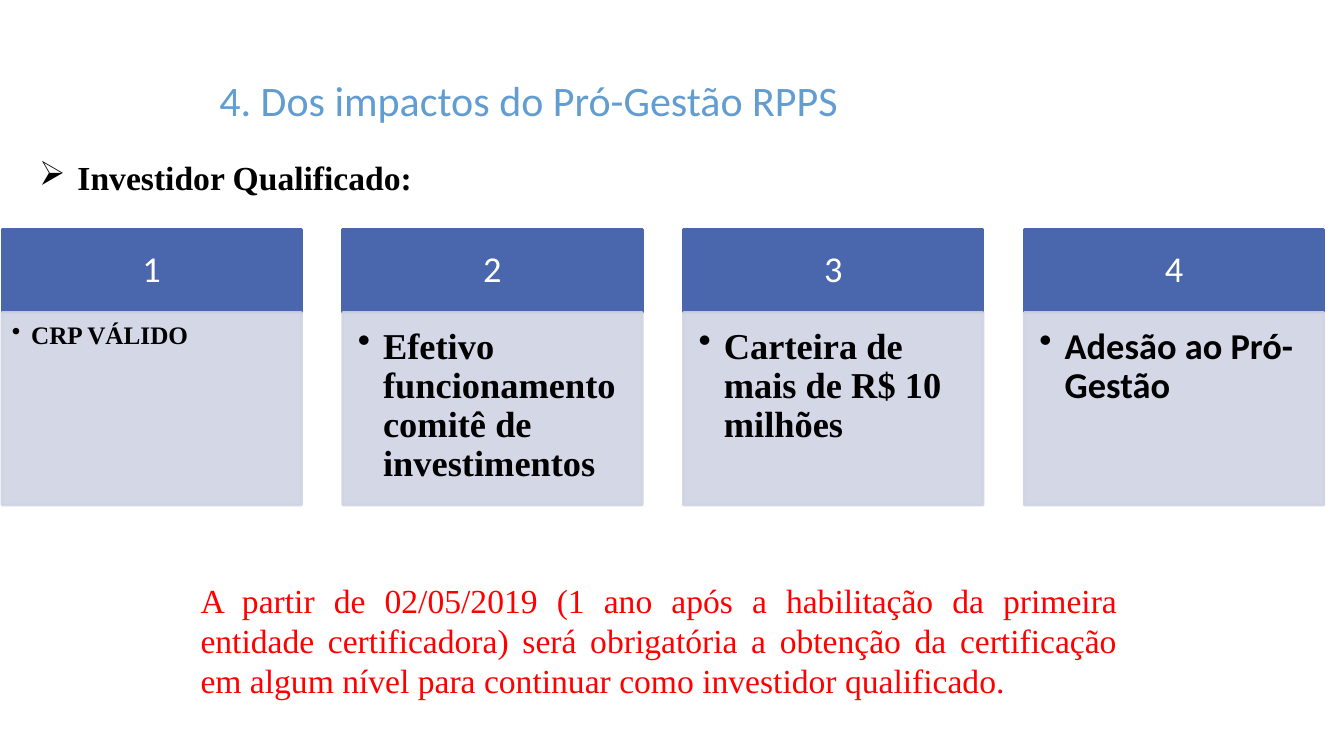
from dataclasses import dataclass
from typing import Any, Optional

import lxml.etree
import pptx
import pptx.dml.color
import pptx.enum.shapes
import pptx.enum.text
import pptx.oxml.ns
import pptx.util

COLOURS = {
    "title": "629DD1",
    "header": "4A66AC",
    "body": "D0D3E3",
    "white": "FFFFFF",
    "black": "000000",
    "notice": "FF0000",
}
EMU_PER_PX = 9144
CARD_LEFT, CARD_TOP, CARD_PITCH = 2, 228, 338
CARD_WIDTH, HEADER_HEIGHT, BODY_HEIGHT = 297, 82, 191
SERIF, SANS = "Times New Roman", "Calibri"
ALIGN = pptx.enum.text.PP_ALIGN
ANCHOR = pptx.enum.text.MSO_ANCHOR


@dataclass(frozen=True)
class Box:
    left: int
    top: int
    width: int
    height: int


@dataclass(frozen=True)
class TextStyle:
    size: int
    font: str
    colour: str
    bold: bool = False
    align: Any = ALIGN.LEFT
    anchor: Any = ANCHOR.TOP
    line_spacing: float = 1.0
    margins: tuple[int, int, int, int] = (10, 5, 10, 5)
    bullet: Optional[str] = None
    indent: int = 0


@dataclass(frozen=True)
class Card:
    text: str
    font: str = SERIF
    size: int = 26
    indent: int = 25
    margins: tuple[int, int, int, int] = (15, 15, 20, 23)


CARDS = (
    Card("CRP VÁLIDO", size=18, indent=19, margins=(10, 10, 14, 16)),
    Card("Efetivo funcionamento comitê de investimentos"),
    Card("Carteira de mais de R$ 10 milhões"),
    Card("Adesão ao Pró-Gestão", font=SANS),
)


def px(length: int) -> pptx.util.Emu:
    return pptx.util.Emu(length * EMU_PER_PX)


def rgb(name: str) -> pptx.dml.color.RGBColor:
    return pptx.dml.color.RGBColor.from_string(COLOURS[name])


def apply(target: Any, values: dict[str, Any]) -> None:
    for name, value in values.items():
        setattr(target, name, value)


def add_child(parent: Any, tag: str, **attributes: str) -> None:
    lxml.etree.SubElement(parent, pptx.oxml.ns.qn(tag), attributes)


def write_text(shape: Any, text: str, style: TextStyle) -> None:
    left, top, right, bottom = style.margins
    apply(shape.text_frame, {
        "word_wrap": True,
        "auto_size": pptx.enum.text.MSO_AUTO_SIZE.NONE,
        "vertical_anchor": style.anchor,
        "margin_left": px(left),
        "margin_top": px(top),
        "margin_right": px(right),
        "margin_bottom": px(bottom),
    })
    paragraph = shape.text_frame.paragraphs[0]
    if style.bullet:
        properties = paragraph._p.get_or_add_pPr()
        properties.set("marL", str(px(style.indent)))
        properties.set("indent", str(-px(style.indent)))
        add_child(properties, "a:buChar", char=style.bullet)
    apply(paragraph, {"alignment": style.align, "line_spacing": style.line_spacing})
    run = paragraph.add_run()
    run.text = text
    apply(run.font, {"size": pptx.util.Pt(style.size), "name": style.font, "bold": style.bold})
    run.font.color.rgb = rgb(style.colour)


def add_text(slide: Any, box: Box, text: str, style: TextStyle) -> None:
    shape = slide.shapes.add_textbox(px(box.left), px(box.top), px(box.width), px(box.height))
    write_text(shape, text, style)


def add_panel(slide: Any, box: Box, colour: str, opacity: int, text: str, style: TextStyle) -> None:
    shape = slide.shapes.add_shape(
        pptx.enum.shapes.MSO_SHAPE.RECTANGLE,
        px(box.left), px(box.top), px(box.width), px(box.height),
    )
    shape.shadow.inherit = False
    shape.line.width = pptx.util.Pt(2)
    for fill in (shape.fill, shape.line.fill):
        fill.solid()
        fill.fore_color.rgb = rgb(colour)
    if opacity < 100:
        for colour_element in shape._element.spPr.iter(pptx.oxml.ns.qn("a:srgbClr")):
            add_child(colour_element, "a:alpha", val=str(opacity * 1000))
    write_text(shape, text, style)


def add_title(slide: Any, box: Box, text: str, style: TextStyle) -> None:
    title = slide.shapes.title
    apply(title, {name: px(getattr(box, name)) for name in ("left", "top", "width", "height")})
    write_text(title, text, style)


def add_card(slide: Any, index: int, card: Card) -> None:
    left = CARD_LEFT + index * CARD_PITCH
    add_panel(
        slide, Box(left, CARD_TOP, CARD_WIDTH, HEADER_HEIGHT), "header", 100, str(index + 1),
        TextStyle(26, SANS, "white", align=ALIGN.CENTER, anchor=ANCHOR.MIDDLE,
                  line_spacing=0.9, margins=(20, 12, 20, 12)),
    )
    add_panel(
        slide, Box(left, CARD_TOP + HEADER_HEIGHT, CARD_WIDTH, BODY_HEIGHT), "body", 90, card.text,
        TextStyle(card.size, card.font, "black", bold=True, line_spacing=0.9,
                  margins=card.margins, bullet="•", indent=card.indent),
    )


def main() -> None:
    presentation = pptx.Presentation()
    apply(presentation, {"slide_width": px(1333), "slide_height": px(750)})
    slide = presentation.slides.add_slide(presentation.slide_layouts[5])
    add_title(
        slide, Box(-2, 59, 1053, 79), "4. Dos impactos do Pró-Gestão RPPS",
        TextStyle(30, SANS, "title", align=ALIGN.CENTER, anchor=ANCHOR.MIDDLE),
    )
    add_text(
        slide, Box(29, 131, 1236, 63), "Investidor Qualificado:",
        TextStyle(24, SERIF, "black", bold=True, align=ALIGN.JUSTIFY,
                  line_spacing=1.5, bullet="➢", indent=38),
    )
    for index, card in enumerate(CARDS):
        add_card(slide, index, card)
    add_text(
        slide, Box(189, 570, 929, 131),
        "A partir de 02/05/2019 (1 ano após a habilitação da primeira entidade certificadora) "
        "será obrigatória a obtenção da certificação em algum nível para continuar como "
        "investidor qualificado.",
        TextStyle(24, SERIF, "notice", align=ALIGN.JUSTIFY),
    )
    presentation.save("out.pptx")


if __name__ == "__main__":
    main()
